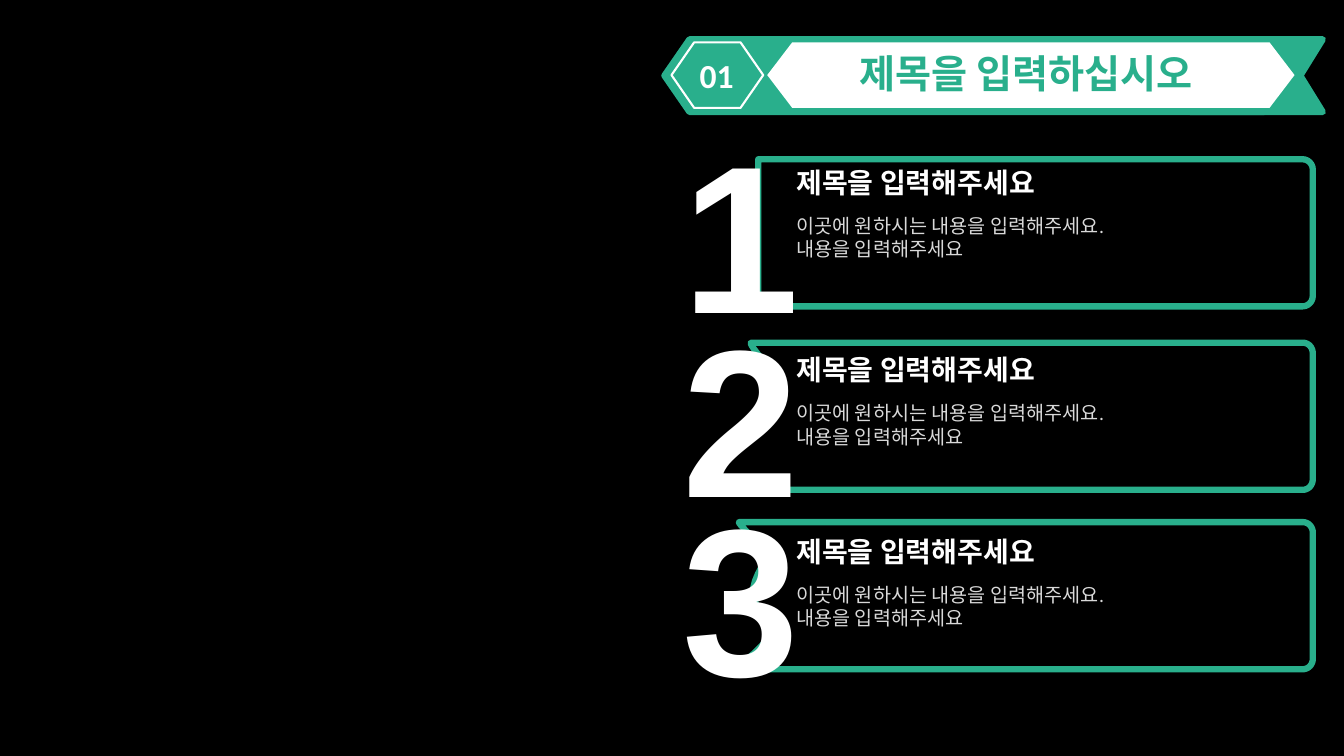
from dataclasses import dataclass

from pptx import Presentation
from pptx.dml.color import RGBColor
from pptx.enum.shapes import MSO_SHAPE
from pptx.enum.text import MSO_AUTO_SIZE, PP_ALIGN
from pptx.oxml.ns import qn
from pptx.util import Inches, Pt

HEXAGON = MSO_SHAPE.HEXAGON
PENTAGON = MSO_SHAPE.PENTAGON
CHEVRON = MSO_SHAPE.CHEVRON
ROUNDED_END = MSO_SHAPE.ROUND_2_SAME_RECTANGLE
GROW = MSO_AUTO_SIZE.SHAPE_TO_FIT_TEXT
LEFT, CENTER = PP_ALIGN.LEFT, PP_ALIGN.CENTER


@dataclass(frozen=True)
class Theme:
    """Colours, fonts and sizes of the slide."""
    black: str = "000000"
    white: str = "FFFFFF"
    green: str = "29AF8C"
    grey: str = "D9D9D9"
    font: str = "Calibri"
    digit_font: str = "Arial"
    digit: float = 150
    heading: float = 28
    badge: float = 24
    title: float = 20
    body: float = 14
    thick: float = 4.5
    thin: float = 1.5


THEME = Theme()
CARD_HEIGHT = 1.46
NOTCH_TWO = [
    [(0.6, 1.46)],
    [(0.56, 1.46), (0, 1.47), (0, 1.44)],
    [(0.19, 1.11), (0.57, 0.8), (0.66, 0.29)],
    [(0.66, 0.25), (0.43, 0), (0.47, 0)],
]
NOTCH_THREE = [
    [(0.35, 1.46)],
    [(0.32, 1.46), (0.67, 1.15), (0.67, 1.12)],
    [(0.45, 0.7), (0.42, 0.7), (0.64, 0.33)],
    [(0.64, 0.3), (0.32, 0), (0.35, 0)],
]
CARDS = [
    ("1", 1.58, 0.01, None),
    ("2", 3.4, 0.05, NOTCH_TWO),
    ("3", 5.18, 0.07, NOTCH_THREE),
]


def add_text(slide, text, box, *, size, color, font=THEME.font, bold=False,
             align=LEFT, wrap=False):
    """Add a text box with one paragraph for each line of text."""
    frame = slide.shapes.add_textbox(*map(Inches, box)).text_frame
    frame.word_wrap = wrap
    frame.auto_size = GROW
    frame.text = text
    for paragraph in frame.paragraphs:
        paragraph.alignment = align
        face = paragraph.runs[0].font
        face.name, face.size, face.bold = font, Pt(size), bold
        face.color.rgb = RGBColor.from_string(color)


def paint(shape, fill=None, line=None, width=THEME.thick):
    """Set fill and line of a shape, leaving out whichever is None."""
    shape.shadow.inherit = False
    if fill:
        shape.fill.solid()
        shape.fill.fore_color.rgb = RGBColor.from_string(fill)
    else:
        shape.fill.background()
    if line:
        shape.line.color.rgb = RGBColor.from_string(line)
        shape.line.width = Pt(width)
    else:
        shape.line.fill.background()


def add_preset(slide, kind, box, adjustments, flip=False, **look):
    """Add a painted preset shape, mirrored left to right if asked."""
    shape = slide.shapes.add_shape(kind, *map(Inches, box))
    for index, value in enumerate(adjustments):
        shape.adjustments[index] = value
    if flip:
        shape._element.spPr.find(qn("a:xfrm")).set("flipH", "1")
    paint(shape, **look)
    return shape


def curve(start, controls, steps=10):
    """Return points along a cubic curve after its start."""
    corners = [start, *controls]
    points = []
    for step in range(1, steps + 1):
        t = step / steps
        weights = ((1 - t) ** 3, 3 * t * (1 - t) ** 2, 3 * t * t * (1 - t), t ** 3)
        points.append(tuple(sum(w * c[axis] for w, c in zip(weights, corners))
                            for axis in (0, 1)))
    return points


def notched_frame(slide, left, top, width, notch):
    """Draw a card frame with rounded right corners and a notched left side."""
    inner, bottom = width - 0.1, CARD_HEIGHT
    segments = [
        [(width, bottom - 0.1)],
        [(width, bottom - 0.05), (width - 0.04, bottom), (inner, bottom)],
        *notch,
        [(inner, 0)],
        [(width - 0.04, 0), (width, 0.05), (width, 0.1)],
    ]
    points = [(width, 0.1)]
    for segment in segments:
        points += segment if len(segment) == 1 else curve(points[-1], segment)
    placed = [(Inches(left + x), Inches(top + y)) for x, y in points]
    builder = slide.shapes.build_freeform(*placed[0], scale=1.0)
    builder.add_line_segments(placed[1:], close=True)
    paint(builder.convert_to_shape(), line=THEME.green)


def plain_frame(slide, left, top, width):
    """Draw a card frame whose right corners are rounded."""
    shift = (width - CARD_HEIGHT) / 2
    frame = add_preset(slide, ROUNDED_END,
                       (left + shift, top - shift, CARD_HEIGHT, width),
                       (0.07, 0), line=THEME.green)
    frame.rotation = 90


def card(slide, left, top, width, number, title_drop, notch):
    """Draw a frame, its large number, title and body."""
    if notch:
        notched_frame(slide, left, top, width, notch)
    else:
        plain_frame(slide, left + 0.54, top, width - 0.54)
    text_left, title_top = left + 0.82, top + title_drop
    add_text(slide, number, (left - 0.31, top - 0.6, 1.42, 2.63),
             size=THEME.digit, color=THEME.white, font=THEME.digit_font, bold=True)
    add_text(slide, "제목을 입력해주세요", (text_left, title_top, 2.79, 0.44),
             size=THEME.title, color=THEME.white, bold=True)
    add_text(slide, "이곳에 원하시는 내용을 입력해주세요.\n내용을 입력해주세요",
             (text_left, title_top + 0.48, 4.48, 0.81),
             size=THEME.body, color=THEME.grey, wrap=True)


def banner(slide, left, top):
    """Draw the heading ribbon with its number badge."""
    ribbon = {"flip": True, "fill": THEME.green, "line": THEME.green}
    add_preset(slide, PENTAGON, (left, top, 5.95, 0.72), (0.345,), **ribbon)
    add_preset(slide, CHEVRON, (left + 4.99, top, 1.54, 0.72), (0.31,), **ribbon)
    add_preset(slide, HEXAGON, (left + 1.02, top + 0.03, 5.23, 0.65),
               (0.381, 1.155), fill=THEME.white)
    add_text(slide, "01", (left + 0.25, top + 0.11, 0.54, 0.5),
             size=THEME.badge, color=THEME.white, bold=True)
    add_text(slide, "제목을 입력하십시오", (left + 1.29, top + 0.05, 4.6, 0.57),
             size=THEME.heading, color=THEME.green, bold=True,
             align=CENTER, wrap=True)
    add_preset(slide, HEXAGON, (left + 0.07, top + 0.03, 0.91, 0.65),
               (0.346, 1.155), line=THEME.white, width=THEME.thin)


def main():
    """Build the slide and save it."""
    deck = Presentation()
    deck.slide_width, deck.slide_height = Inches(13.33), Inches(7.5)
    slide = deck.slides.add_slide(deck.slide_layouts[6])
    slide.background.fill.solid()
    slide.background.fill.fore_color.rgb = RGBColor.from_string(THEME.black)
    for number, top, title_drop, notch in CARDS:
        card(slide, 6.98, top, 6.04, number, title_drop, notch)
    banner(slide, 6.59, 0.39)
    deck.save("out.pptx")


if __name__ == "__main__":
    main()
